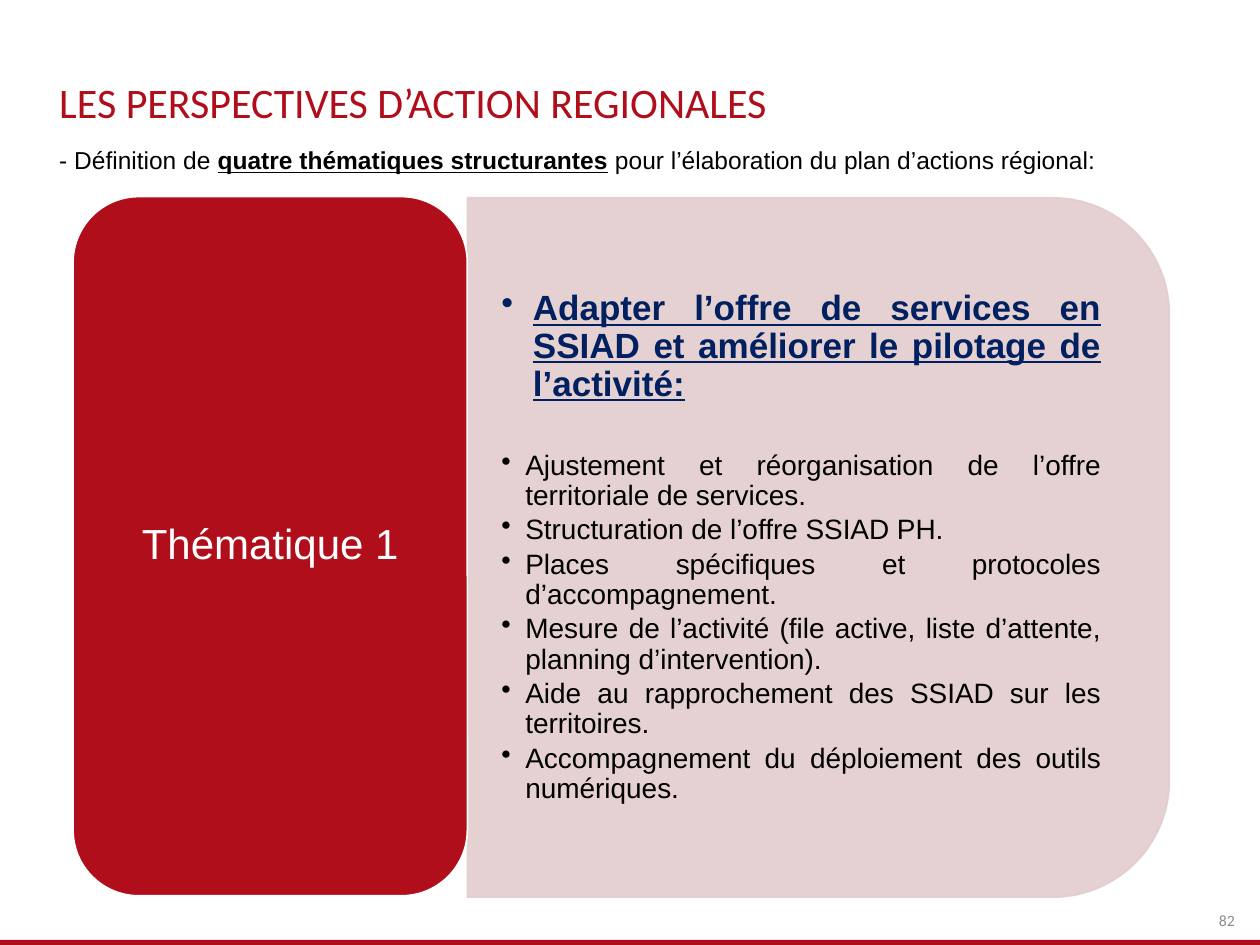
from lxml import etree
from pptx import Presentation
from pptx.dml.color import RGBColor
from pptx.enum.shapes import MSO_SHAPE
from pptx.enum.text import MSO_ANCHOR, MSO_AUTO_SIZE, PP_ALIGN
from pptx.oxml.ns import qn
from pptx.util import Inches, Pt

ROUND_RECT = MSO_SHAPE.ROUNDED_RECTANGLE
ROUND_TOP = MSO_SHAPE.ROUND_2_SAME_RECTANGLE
RECT = MSO_SHAPE.RECTANGLE
TOP, MIDDLE = MSO_ANCHOR.TOP, MSO_ANCHOR.MIDDLE
LEFT, CENTER = PP_ALIGN.LEFT, PP_ALIGN.CENTER
RIGHT, JUSTIFY = PP_ALIGN.RIGHT, PP_ALIGN.JUSTIFY
NO_AUTOFIT = MSO_AUTO_SIZE.NONE

COLORS = {"red": "AF0E1A", "pink": "E3CCCD", "navy": "002060",
          "black": "000000", "white": "FFFFFF", "grey": "8C8C8C"}

TITLE = "LES PERSPECTIVES D’ACTION REGIONALES"
INTRO = [("- Définition de ", False),
         ("quatre thématiques\u00a0structurantes", True),
         (" pour l’élaboration du plan d’actions régional:", False)]
THEME = "Thématique 1"
GOAL = "Adapter l’offre de services en SSIAD et améliorer le pilotage de l’activité:"
ACTIONS = [
    "Ajustement et réorganisation de l’offre territoriale de services.",
    "Structuration de l’offre SSIAD PH.",
    "Places spécifiques et protocoles d’accompagnement.",
    "Mesure de l’activité (file active, liste d’attente, planning d’intervention).",
    "Aide au rapprochement des SSIAD sur les territoires.",
    "Accompagnement du déploiement des outils numériques.",
]
PAGE = "82"


def rgb(name):
    return RGBColor.from_string(COLORS[name])


def place(shape, left, top, width, height):
    shape.left, shape.top = Inches(left), Inches(top)
    shape.width, shape.height = Inches(width), Inches(height)


def set_frame(shape, anchor=TOP, side=0, edge=0):
    frame = shape.text_frame
    frame.word_wrap = True
    frame.auto_size = NO_AUTOFIT
    frame.vertical_anchor = anchor
    frame.margin_left = frame.margin_right = Inches(side)
    frame.margin_top = frame.margin_bottom = Inches(edge)
    return frame


def style(paragraph, size, color, face="Arial", align=LEFT, spacing=0.9, after=0):
    paragraph.alignment = align
    paragraph.line_spacing = spacing
    paragraph.space_before = Pt(0)
    paragraph.space_after = Pt(after)
    font = paragraph.font
    font.size, font.name = Pt(size), face
    font.color.rgb = rgb(color)


def set_bullet(paragraph, indent):
    props = paragraph._p.get_or_add_pPr()
    props.set("marL", str(Inches(indent)))
    props.set("indent", str(Inches(-indent)))
    if indent:
        etree.SubElement(props, qn("a:buChar")).set("char", "•")
    else:
        etree.SubElement(props, qn("a:buNone"))


def add_block(slide, kind, box, fill, line=None):
    block = slide.shapes.add_shape(kind, *map(Inches, box))
    block.shadow.inherit = False
    block.fill.solid()
    block.fill.fore_color.rgb = rgb(fill)
    if line:
        block.line.color.rgb = rgb(line)
        block.line.width = Pt(1)
    else:
        block.line.fill.background()
    return block


def set_opacity(block, percent):
    for color in block._element.spPr.iter(qn("a:srgbClr")):
        etree.SubElement(color, qn("a:alpha")).set("val", str(percent * 1000))


def main():
    deck = Presentation()
    deck.slide_width, deck.slide_height = Inches(10), Inches(7.5)
    slide = deck.slides.add_slide(deck.slide_layouts[1])
    title, intro = slide.placeholders

    add_block(slide, RECT, (0, 7.46, 10, 0.04), "red")

    place(title, 0.47, 0.67, 9.06, 0.35)
    heading = set_frame(title).paragraphs[0]
    heading.text = TITLE
    style(heading, 24, "red", "Calibri", spacing=0.85)

    place(intro, 0.47, 1.18, 9.06, 0.3)
    sentence = set_frame(intro).paragraphs[0]
    set_bullet(sentence, 0)
    style(sentence, 14, "black")
    for words, stressed in INTRO:
        run = sentence.add_run()
        run.text = words
        run.font.bold = run.font.underline = stressed

    panel = add_block(slide, ROUND_TOP, (3.72, 1.56, 5.55, 5.57), "pink", "pink")
    panel.rotation = 90
    set_opacity(panel, 90)

    details = slide.shapes.add_textbox(*map(Inches, (3.71, 1.84, 5.3, 5.01)))
    frame = set_frame(details, MIDDLE, 0.27, 0.14)
    goal = frame.paragraphs[0]
    goal.text = GOAL
    set_bullet(goal, 0.25)
    style(goal, 20, "navy", align=JUSTIFY, after=27)
    goal.font.bold = goal.font.underline = True
    for words in ACTIONS:
        action = frame.add_paragraph()
        action.text = words
        set_bullet(action, 0.19)
        style(action, 16, "black", align=JUSTIFY, after=2.4)

    theme = add_block(slide, ROUND_RECT, (0.58, 1.56, 3.13, 5.55), "red", "white")
    label = set_frame(theme, MIDDLE).paragraphs[0]
    label.text = THEME
    style(label, 24, "white", align=CENTER)

    number = slide.shapes.add_textbox(*map(Inches, (9.55, 7.23, 0.25, 0.15)))
    page = set_frame(number).paragraphs[0]
    page.text = PAGE
    style(page, 9, "grey", "Calibri", RIGHT, 1)

    deck.save("out.pptx")


if __name__ == "__main__":
    main()
